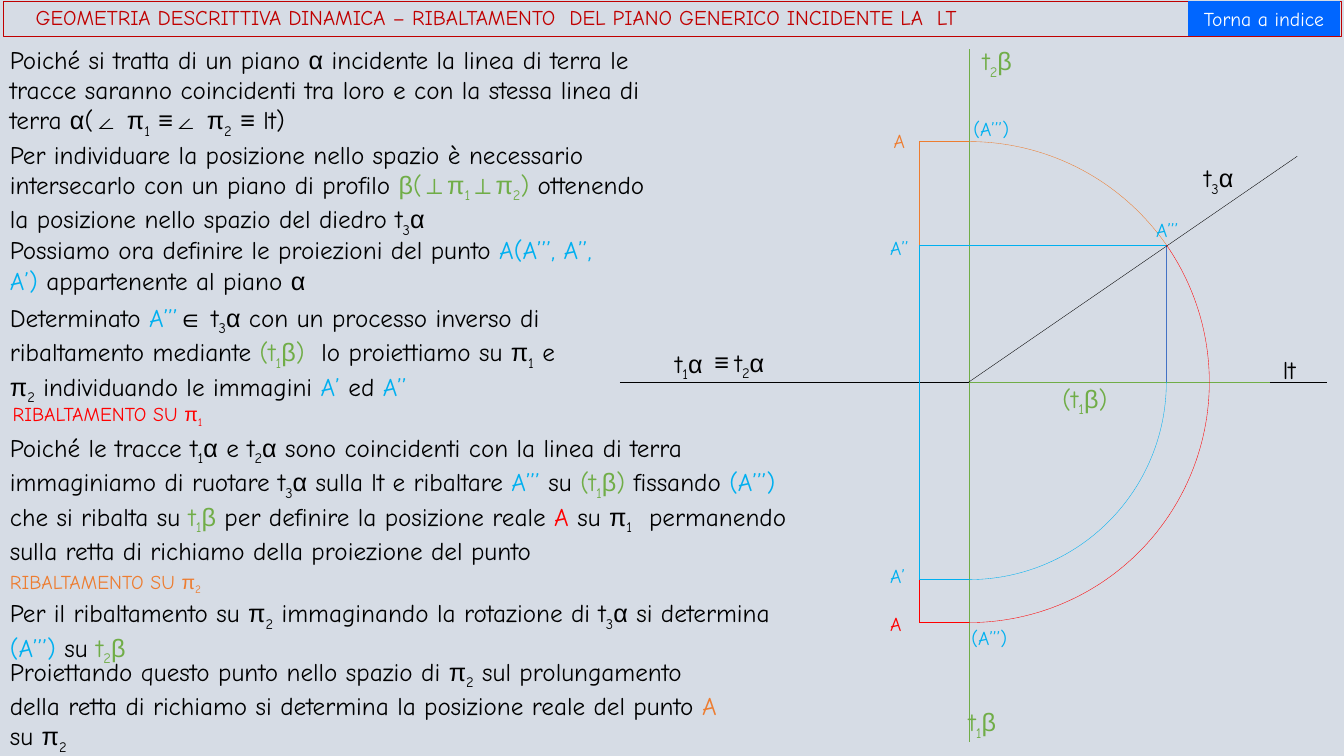
from dataclasses import dataclass, field
from itertools import groupby
from math import atan2, degrees, hypot

from lxml.etree import SubElement
from pptx import Presentation
from pptx.dml.color import RGBColor
from pptx.enum.shapes import MSO_CONNECTOR, MSO_SHAPE
from pptx.enum.text import MSO_ANCHOR, MSO_AUTO_SIZE, PP_ALIGN
from pptx.oxml.ns import qn
from pptx.util import Pt


@dataclass(frozen=True)
class Theme:
    """Colours by one-letter key, fonts, type sizes and line widths."""
    colours: dict = field(default_factory=lambda: {
        "k": "000000", "w": "FFFFFF", "g": "70AD47", "c": "00B0F0", "r": "FF0000",
        "o": "ED7D31", "d": "C00000", "b": "0066FF", "v": "4472C4", "s": "D6DCE5"})
    font: str = "Comic Neue"
    symbol_font: str = "Arial"
    symbols: str = "αβπ∠≡⊥∈"
    title: int = 15
    body: int = 18
    small: int = 14
    hair: float = 0.25
    thin: float = 0.5

    def rgb(self, key):
        """Return the colour for a key."""
        return RGBColor.from_string(self.colours[key])


T = Theme()

PARAGRAPHS = [
    (0, 0, 478, 73, T.body, "~kPoiché si tratta di un piano α incidente la linea di terra le tracce saranno "
     "coincidenti tra loro e con la stessa linea di terra α(∠ π_1 ≡∠ π_2 ≡ lt)"),
    (0, 67.7, 486, 73, T.body, "~kPer individuare la posizione nello spazio è necessario intersecarlo con un "
     "piano di profilo ~gβ(⊥π_1⊥π_2) ~kottenendo la posizione nello spazio del diedro t_3α"),
    (0, 136, 430.5, 51, T.body, "~kPossiamo ora definire le proiezioni del punto ~cA(A’’’, A’’, A’) "
     "~kappartenente al piano α"),
    (0, 184.3, 413, 73, T.body, "~kDeterminato ~cA’’’~k∈ t_3α con un processo inverso di ribaltamento mediante "
     "~g(t_1β) ~k lo proiettiamo su π_1 e π_2 individuando le immagini ~cA’ ~ked ~cA’’"),
    (2, 255.6, 329, 24.5, T.small, "~rRIBALTAMENTO SU π_1"),
    (0, 277.2, 576, 94, T.body, "~kPoiché le tracce t_1α e t_2α sono coincidenti con la linea di terra "
     "immaginiamo di ruotare t_3α sulla lt e ribaltare ~cA’’’ ~ksu ~g(t_1β) ~kfissando ~c(A’’’) "
     "~kche si ribalta su ~gt_1β ~kper definire la posizione reale ~rA ~ksu π_1  permanendo "
     "sulla retta di richiamo della proiezione del punto"),
    (0, 375.1, 176, 24.5, T.small, "~oRIBALTAMENTO SU π_2"),
    (0, 395.3, 560, 51, T.body, "~kPer il ribaltamento su π_2 immaginando la rotazione di t_3α si determina "
     "~c(A’’’) ~ksu ~gt_2β"),
    (0, 437, 532, 73, T.body, "~kProiettando questo punto nello spazio di π_2 sul prolungamento della retta "
     "di richiamo si determina la posizione reale del punto ~oA~k su π_2"),
]

LABELS = [
    (186, 364, 42, 24, T.small, "~cA’"), (186, 130, 42, 24, T.small, "~cA’’"),
    (376, 117, 42, 24, T.small, "~cA’’’"), (186, 398, 42, 24, T.small, "~rA"),
    (188.5, 53.5, 42, 24, T.small, "~oA"), (244, 408.5, 42.5, 25, T.small, "~c(A’’’)"),
    (245.3, 45, 42.5, 25, T.small, "~c(A’’’)"), (252, -6.2, 50, 29, T.body, "~gt_2β"),
    (242, 466, 50, 29, T.body, "~gt_1β"), (309, 235, 53, 28, T.body, "~g(t_1β)"),
    (410.3, 77.3, 50, 29, T.body, "~kt_3α"), (75, 209, 50, 29, T.body, "~kt_2α"),
    (32.4, 210, 50, 29, T.body, "~kt_1α"), (60.4, 208.3, 28, 29, T.body, "~k≡"),
    (466.5, 214, 32, 29, T.body, "~klt"),
]


def put(obj, **values):
    """Set several attributes on an object."""
    for name, value in values.items():
        setattr(obj, name, value)


def add_run(p, text, size, key, font, sub=False):
    """Add one formatted run."""
    r = p.add_run()
    r.text = text
    put(r.font, size=Pt(size), name=font)
    r.font.color.rgb = T.rgb(key)
    if sub:
        r.font._element.set("baseline", "-25000")


def write(p, text, size):
    """Write marked text: ~x switches colour, _n is a subscript."""
    for part in text.split("~")[1:]:
        key, part = part[0], part[1:]
        for i, piece in enumerate(part.split("_")):
            if i:
                add_run(p, piece[0], size, key, T.font, True)
                piece = piece[1:]
            for is_symbol, chars in groupby(piece, lambda ch: ch in T.symbols):
                add_run(p, "".join(chars), size, key, T.symbol_font if is_symbol else T.font)


def add_texts(s, x, y, items):
    """Place text boxes relative to a corner."""
    for dx, dy, w, h, size, text in items:
        tf = s.shapes.add_textbox(Pt(x + dx), Pt(y + dy), Pt(w), Pt(h)).text_frame
        put(tf, word_wrap=True, auto_size=MSO_AUTO_SIZE.SHAPE_TO_FIT_TEXT)
        write(tf.paragraphs[0], text, size)


def add_line(s, x1, y1, x2, y2, key, width=T.hair):
    """Draw a straight line."""
    c = s.shapes.add_connector(MSO_CONNECTOR.STRAIGHT, Pt(x1), Pt(y1), Pt(x2), Pt(y2))
    c.line.color.rgb = T.rgb(key)
    c.line.width = Pt(width)
    SubElement(c._element.spPr, qn("a:effectLst"))


def add_arc(s, cx, cy, radius, start, end, key):
    """Draw a clockwise arc between two angles in degrees."""
    sp = s.shapes.add_shape(MSO_SHAPE.ARC, Pt(cx - radius), Pt(cy - radius), Pt(2 * radius), Pt(2 * radius))
    sp.adjustments[0], sp.adjustments[1] = start * 0.6, end * 0.6
    sp.shadow.inherit = False
    sp.fill.background()
    sp.line.color.rgb = T.rgb(key)
    sp.line.width = Pt(T.hair)


def add_header(s, x, y, w, h):
    """Place the title bar and the button at its right end."""
    sp = s.shapes.title
    put(sp, left=Pt(x), top=Pt(y), width=Pt(w), height=Pt(h))
    sp.line.color.rgb = T.rgb("d")
    sp.line.width = Pt(T.hair)
    tf = sp.text_frame
    put(tf, vertical_anchor=MSO_ANCHOR.MIDDLE, auto_size=MSO_AUTO_SIZE.NONE, word_wrap=True,
        margin_left=Pt(23.5))
    p = tf.paragraphs[0]
    put(p, alignment=PP_ALIGN.LEFT, line_spacing=0.9)
    write(p, "~dGEOMETRIA DESCRITTIVA DINAMICA – RIBALTAMENTO  DEL PIANO GENERICO INCIDENTE LA  LT", T.title)

    bw = 108
    sp = s.shapes.add_shape(MSO_SHAPE.ACTION_BUTTON_CUSTOM, Pt(x + w - bw - 1.3), Pt(y), Pt(bw), Pt(h))
    sp.shadow.inherit = False
    sp.fill.solid()
    sp.fill.fore_color.rgb = T.rgb("b")
    sp.line.fill.background()
    tf = sp.text_frame
    put(tf, vertical_anchor=MSO_ANCHOR.MIDDLE, word_wrap=True)
    p = tf.paragraphs[0]
    p.alignment = PP_ALIGN.CENTER
    write(p, "~wTorna a indice", T.small)


def add_construction(s, x, y, w, h):
    """Draw the rotation of the trace onto both planes, with its labels."""
    cx, cy = x + 249.2, y + 237.6
    run, rise = 141.1, 98
    radius = hypot(run, rise)
    angle = 360 - degrees(atan2(rise, run))
    left, right = cx - 35.3, cx + run
    top, upper, lower, bottom = cy - radius, cy - rise, cy + run, cy + radius
    lines = [
        (x, cy, x + w, cy, "k"),
        (left, upper, left, cy, "c"),
        (left, cy, left, lower, "c"),
        (cx, y, cx, y + h, "g"),
        (left, upper, cx, upper, "c"),
        (left, lower, cx, lower, "c"),
        (right, cy, right, upper, "v"),
        (cx, upper, right, upper, "c"),
        (cx, cy, cx + 234.7, cy - 161.3, "k"),
        (cx, bottom, left, bottom, "r"),
        (left, lower, left, bottom, "r"),
        (cx, cy, cx + 215.3, cy, "g", T.thin),
        (cx, top, left, top, "o"),
        (left, upper, left, top, "o"),
    ]
    for line in lines:
        add_line(s, *line)
    for size, start, end, key in [(run, 0, 90, "c"), (radius, angle, 90, "r"), (radius, 270, angle, "o")]:
        add_arc(s, cx, cy, size, start, end, key)
    add_texts(s, x, y, LABELS)


def main():
    """Build and save the slide."""
    prs = Presentation()
    put(prs, slide_width=Pt(960), slide_height=Pt(540))
    s = prs.slides.add_slide(prs.slide_layouts[5])
    s.background.fill.solid()
    s.background.fill.fore_color.rgb = T.rgb("s")
    add_header(s, 2, 0.7, 956.2, 25.2)
    add_construction(s, 442.8, 35.3, 505.4, 494.6)
    add_texts(s, 0, 28.1, PARAGRAPHS)
    prs.save("out.pptx")


if __name__ == "__main__":
    main()
